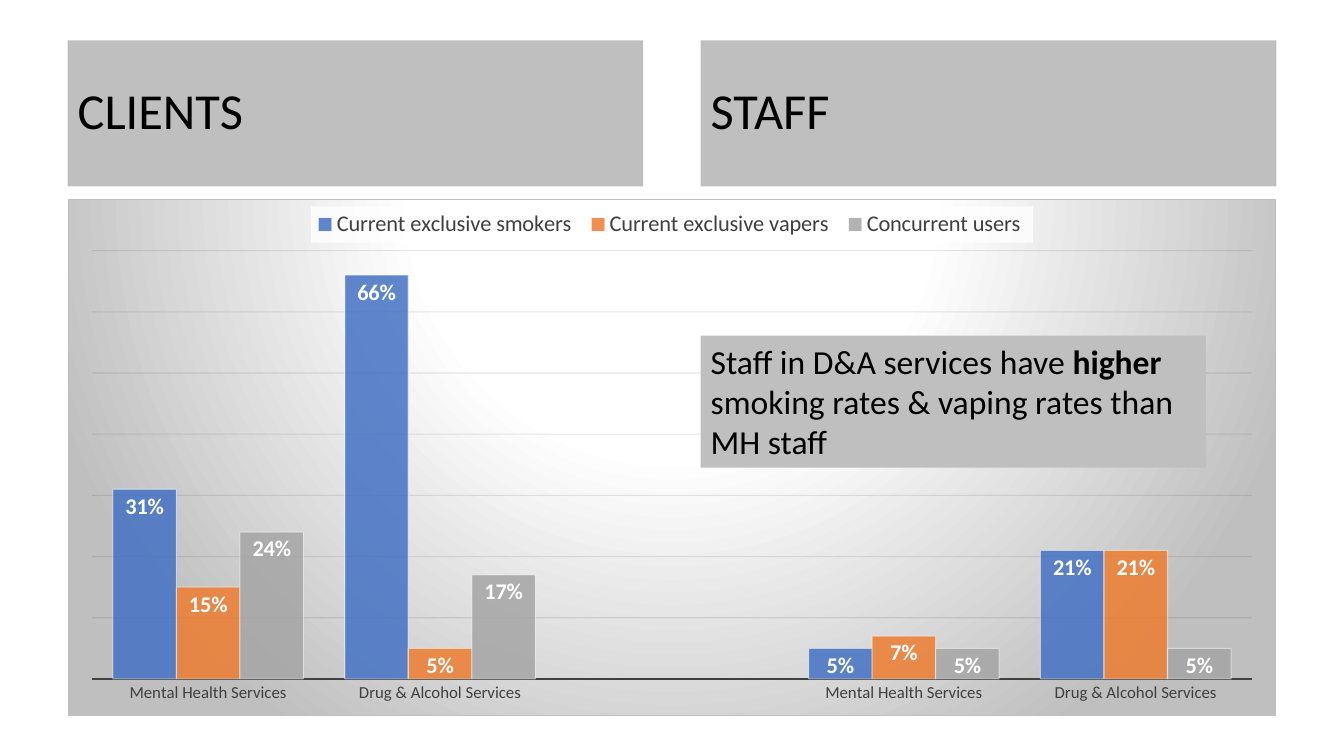
from dataclasses import dataclass

from lxml import etree
from pptx import Presentation
from pptx.chart.data import CategoryChartData
from pptx.dml.color import RGBColor
from pptx.enum import chart as ch, shapes, text
from pptx.oxml import parse_xml
from pptx.oxml.ns import nsdecls, qn
from pptx.util import Inches, Pt

FONT = "Calibri"
HEX = {"gray": "BFBFBF", "black": "000000", "dark": "404040", "grid": "0D0D0D",
       "white": "FFFFFF", "blue": "4472C4", "orange": "ED7D31", "ash": "A5A5A5"}
LEFT, RIGHT, TOP = 0.67, 6.95, 0.4


@dataclass
class Panel:
    runs: list[tuple[str, bool]]
    x: float
    y: float
    w: float
    h: float
    size: int
    head: bool = True


@dataclass
class Bars:
    name: str
    color: str
    vals: list[float | None]


GROUPS = ["Mental Health Services", "Drug & Alcohol Services"]
BARS = [
    Bars("Current exclusive smokers ", "blue", [0.31, 0.66, None, 0.05, 0.21]),
    Bars("Current exclusive vapers ", "orange", [0.15, 0.05, None, 0.07, 0.21]),
    Bars("Concurrent users ", "ash", [0.24, 0.17, None, 0.05, 0.05]),
]
CLIENTS = Panel([("CLIENTS", False)], LEFT, TOP, 5.71, 1.45, 36)
STAFF = Panel([("STAFF", False)], RIGHT, TOP, 5.71, 1.45, 36)
NOTE = Panel([("Staff in D&A services have ", False), ("higher ", True),
              ("smoking rates & vaping rates than MH staff", False)],
             RIGHT, 3.33, 5.01, 1.31, 24, head=False)


def rgb(key: str) -> RGBColor:
    return RGBColor.from_string(HEX[key])


def style(font, size: int, color: str, bold: bool = False) -> None:
    font.name, font.size, font.bold = FONT, Pt(size), bold
    font.color.rgb = rgb(color)


def stroke(line, color: str, width: float) -> None:
    line.color.rgb = rgb(color)
    line.width = Pt(width)


def fade(root, path: str, pct: int) -> None:
    """Set the opacity of every colour found at the path."""
    for node in root.xpath(path):
        etree.SubElement(node, qn("a:alpha"), val=str(pct * 1000))


def fill_panel(shape, panel: Panel) -> None:
    shape.left, shape.top = Inches(panel.x), Inches(panel.y)
    shape.width, shape.height = Inches(panel.w), Inches(panel.h)
    shape.fill.solid()
    shape.fill.fore_color.rgb = rgb("gray")
    frame = shape.text_frame
    frame.word_wrap = True
    frame.auto_size = (text.MSO_AUTO_SIZE.NONE if panel.head
                       else text.MSO_AUTO_SIZE.SHAPE_TO_FIT_TEXT)
    frame.vertical_anchor = text.MSO_ANCHOR.MIDDLE if panel.head else text.MSO_ANCHOR.TOP
    para = frame.paragraphs[0]
    para.alignment = text.PP_ALIGN.LEFT
    para.line_spacing = 0.9 if panel.head else 1.0
    for words, bold in panel.runs:
        run = para.add_run()
        run.text = words
        style(run.font, panel.size, "black", bold)


def add_panel(slide, panel: Panel) -> None:
    shape = slide.shapes.add_shape(shapes.MSO_SHAPE.RECTANGLE, 0, 0, 0, 0)
    shape.shadow.inherit = False
    shape.line.fill.background()
    fill_panel(shape, panel)


def back_xml() -> str:
    stops = "".join(f'<a:gs pos="{pos * 1000}"><a:srgbClr val="{HEX[key]}"/></a:gs>'
                    for pos, key in [(0, "white"), (39, "white"), (100, "gray")])
    return (f'<c:spPr {nsdecls("c", "a")}><a:gradFill><a:gsLst>{stops}</a:gsLst>'
            '<a:path path="circle"><a:fillToRect l="50000" t="-80000" r="50000" b="180000"/>'
            '</a:path></a:gradFill><a:ln w="9525"><a:solidFill>'
            f'<a:srgbClr val="{HEX["gray"]}"/></a:solidFill></a:ln></c:spPr>')


def layout_xml() -> str:
    spots = {"x": 0.02, "y": 0.1, "w": 0.96, "h": 0.83}
    modes = '<c:layoutTarget val="inner"/><c:xMode val="edge"/><c:yMode val="edge"/>'
    sizes = "".join(f'<c:{key} val="{val}"/>' for key, val in spots.items())
    return (f'<c:layout {nsdecls("c")}><c:manualLayout>{modes}{sizes}'
            '</c:manualLayout></c:layout>')


def add_bars(slide) -> None:
    data = CategoryChartData(number_format="0%")
    data.categories = GROUPS + [""] + GROUPS
    for bars in BARS:
        data.add_series(bars.name, bars.vals)
    chart = slide.shapes.add_chart(
        ch.XL_CHART_TYPE.COLUMN_CLUSTERED, Inches(LEFT), Inches(1.97),
        Inches(11.99), Inches(5.13), data).chart
    chart.has_title = False
    style(chart.font, 10, "black")

    # Legend
    chart.has_legend = True
    chart.legend.position = ch.XL_LEGEND_POSITION.TOP
    chart.legend.include_in_layout = False
    style(chart.legend.font, 16, "dark")

    # Axes
    cat, val = chart.category_axis, chart.value_axis
    cat.major_tick_mark = ch.XL_TICK_MARK.NONE
    style(cat.tick_labels.font, 12, "dark")
    stroke(cat.format.line, "dark", 1.5)
    val.minimum_scale, val.maximum_scale, val.major_unit = 0, 0.7, 0.1
    val.has_major_gridlines = True
    stroke(val.major_gridlines.format.line, "grid", 0.75)
    val.visible = False

    # Columns and their labels
    plot = chart.plots[0]
    plot.gap_width, plot.overlap, plot.vary_by_categories = 65, 0, False
    for bars, ser in zip(BARS, plot.series):
        ser.format.fill.solid()
        ser.format.fill.fore_color.rgb = rgb(bars.color)
        stroke(ser.format.line, "white", 0.75)
        tags = ser.data_labels
        tags.show_value = True
        tags.number_format, tags.number_format_is_linked = "0%", False
        tags.position = ch.XL_LABEL_POSITION.INSIDE_END
        style(tags.font, 16, "white", True)

    # Opacity, backgrounds and plot position
    root = chart.element
    fade(root, ".//c:ser/c:spPr/a:solidFill/a:srgbClr", 85)
    fade(root, ".//c:ser/c:spPr/a:ln/a:solidFill/a:srgbClr", 50)
    fade(root, ".//c:majorGridlines//a:srgbClr", 10)
    root.xpath("./c:chart")[0].addnext(parse_xml(back_xml()))
    root.xpath(".//c:legend/c:txPr")[0].addprevious(parse_xml(
        f'<c:spPr {nsdecls("c", "a")}><a:solidFill><a:srgbClr val="{HEX["white"]}"/>'
        '</a:solidFill></c:spPr>'))
    fade(root, ".//c:legend/c:spPr//a:srgbClr", 78)
    area = root.xpath(".//c:plotArea")[0]
    for old in area.xpath("./c:layout"):
        area.remove(old)
    area.insert(0, parse_xml(layout_xml()))


def main() -> None:
    deck = Presentation()
    deck.slide_width, deck.slide_height = Inches(13.33), Inches(7.5)
    slide = deck.slides.add_slide(deck.slide_layouts[5])
    fill_panel(slide.shapes.title, CLIENTS)
    add_bars(slide)
    for panel in (NOTE, STAFF):
        add_panel(slide, panel)
    deck.save("out.pptx")


if __name__ == "__main__":
    main()
